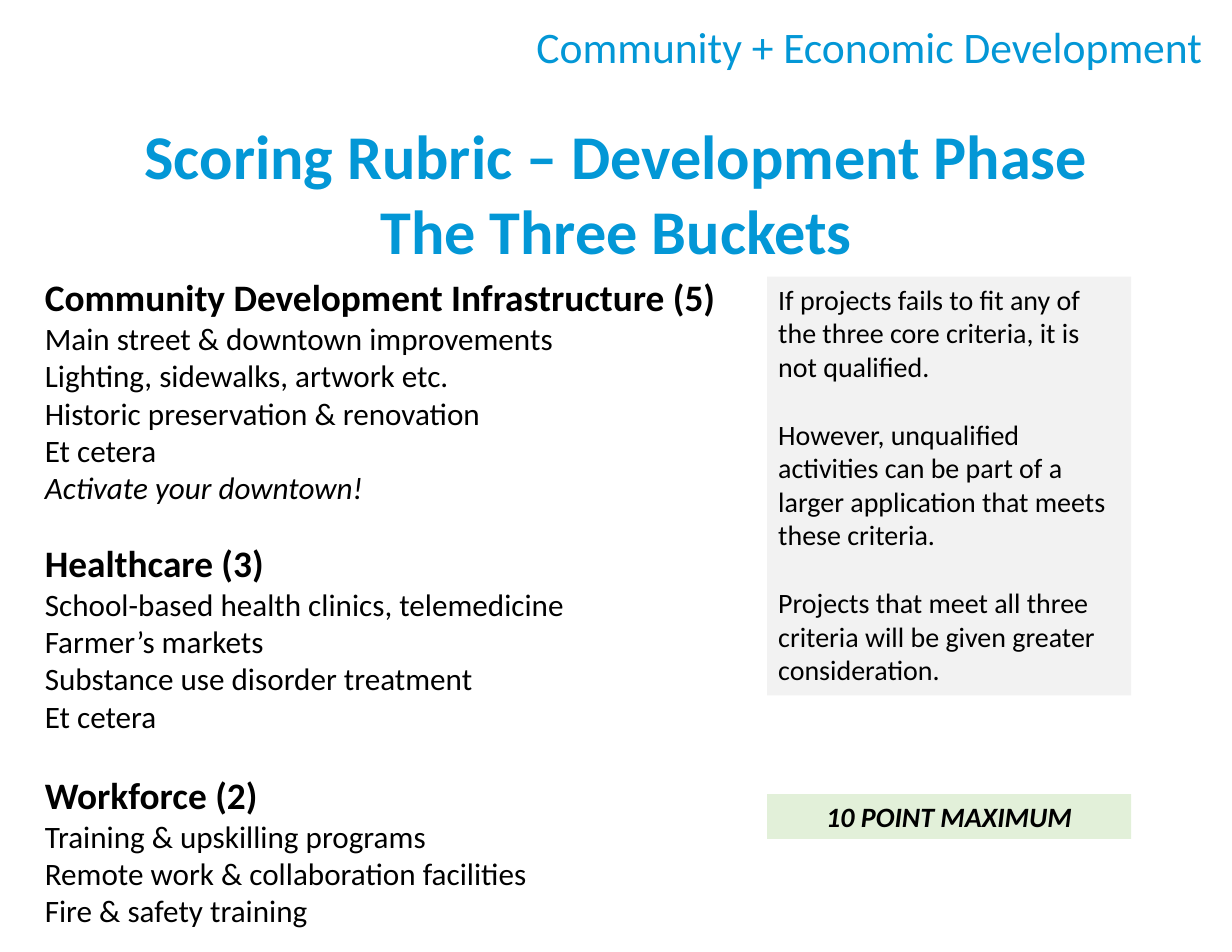
from pptx import Presentation
from pptx import util as u
from pptx.dml.color import RGBColor
from pptx.enum import shapes, text
from pptx.oxml.ns import qn

COLOURS = {"blue": "0397D6", "black": "000000", "grey": "F2F2F2", "green": "E2F0D9"}
FONT = "Calibri"
LEFT, CENTER, RIGHT = text.PP_ALIGN.LEFT, text.PP_ALIGN.CENTER, text.PP_ALIGN.RIGHT

TITLE = ["Scoring Rubric – Development Phase", "The Three Buckets"]
BUCKETS = [
    ("Community Development Infrastructure (5)", 0, [
        "Main street & downtown improvements",
        "Lighting, sidewalks, artwork etc.",
        "Historic preservation & renovation",
        "Et cetera",
        "Activate your downtown!",
    ]),
    ("Healthcare (3)", 22, [
        "School-based health clinics, telemedicine",
        "Farmer’s markets",
        "Substance use disorder treatment",
        "Et cetera",
    ]),
    ("Workforce (2)", 24.4, [
        "Training & upskilling programs",
        "Remote work & collaboration facilities",
        "Fire & safety training",
    ]),
]
SLOGAN = "Activate your downtown!"
RULES = [
    "If projects fails to fit any of the three core criteria, it is not qualified.",
    "However, unqualified activities can be part of a larger application that meets these criteria.",
    "Projects that meet all three criteria will be given greater consideration.",
]


def place(shape, box):
    """Move a shape to a box in inches and return its top-anchored text frame."""
    shape.left, shape.top, shape.width, shape.height = map(u.Inches, box)
    frame = shape.text_frame
    frame.word_wrap = True
    frame.auto_size = text.MSO_AUTO_SIZE.NONE
    frame.vertical_anchor = text.MSO_ANCHOR.TOP
    return frame


def style(para, size, colour="black", bold=False, italic=False, align=LEFT, before=0):
    """Format a paragraph and its runs."""
    para.alignment = align
    para.space_before = u.Pt(before)
    for span in para.runs:
        font = span.font
        font.name, font.size, font.bold, font.italic = FONT, u.Pt(size), bold, italic
        font.color.rgb = RGBColor.from_string(COLOURS[colour])


def add_banner(page, box):
    """Write the programme name at the top right."""
    frame = place(page.shapes.add_textbox(0, 0, 0, 0), box)
    frame.text = "Community + Economic Development"
    style(frame.paragraphs[0], 28, "blue", align=RIGHT)


def fill_title(page, box):
    """Write the two-line title."""
    frame = place(page.shapes.title, box)
    frame.text = "\n".join(TITLE)
    for para in frame.paragraphs:
        style(para, 40, "blue", bold=True, align=CENTER)


def fill_buckets(page, box):
    """List each bucket as a heading followed by its unbulleted items."""
    frame = place(page.placeholders[1], box)
    frame.text = "\n".join(line for head, _, items in BUCKETS for line in [head, *items])
    paras = iter(frame.paragraphs)
    for _, gap, items in BUCKETS:
        style(next(paras), 24, bold=True, before=gap)
        for item in items:
            style(next(paras), 20, italic=item == SLOGAN)
    for para in frame.paragraphs:
        props = para._p.get_or_add_pPr()
        props.set("marL", "0")
        props.set("indent", "0")
        props.append(props.makeelement(qn("a:buNone"), {}))


def add_panel(page, box, fill, lines, gap=0, **look):
    """Draw a filled panel with one paragraph for each line."""
    panel = page.shapes.add_shape(shapes.MSO_SHAPE.RECTANGLE, 0, 0, 0, 0)
    panel.shadow.inherit = False
    panel.fill.solid()
    panel.fill.fore_color.rgb = RGBColor.from_string(COLOURS[fill])
    panel.line.fill.background()
    frame = place(panel, box)
    frame.text = "\n".join(lines)
    for index, para in enumerate(frame.paragraphs):
        style(para, 18, before=gap if index else 0, **look)


def main():
    """Build and save the deck."""
    deck = Presentation()
    deck.slide_width, deck.slide_height = u.Inches(11), u.Inches(8.5)
    page = deck.slides.add_slide(deck.slide_layouts[1])
    add_banner(page, (3.47, 0.13, 7.36, 0.57))
    fill_title(page, (0.43, 1, 10.14, 1.45))
    fill_buckets(page, (0.3, 2.4, 7.24, 5.99))
    add_panel(page, (6.85, 2.47, 3.25, 3.74), "grey", RULES, gap=22)
    add_panel(page, (6.85, 7.09, 3.25, 0.4), "green", ["10 POINT MAXIMUM"],
              bold=True, italic=True, align=CENTER)
    deck.save("out.pptx")


if __name__ == "__main__":
    main()
